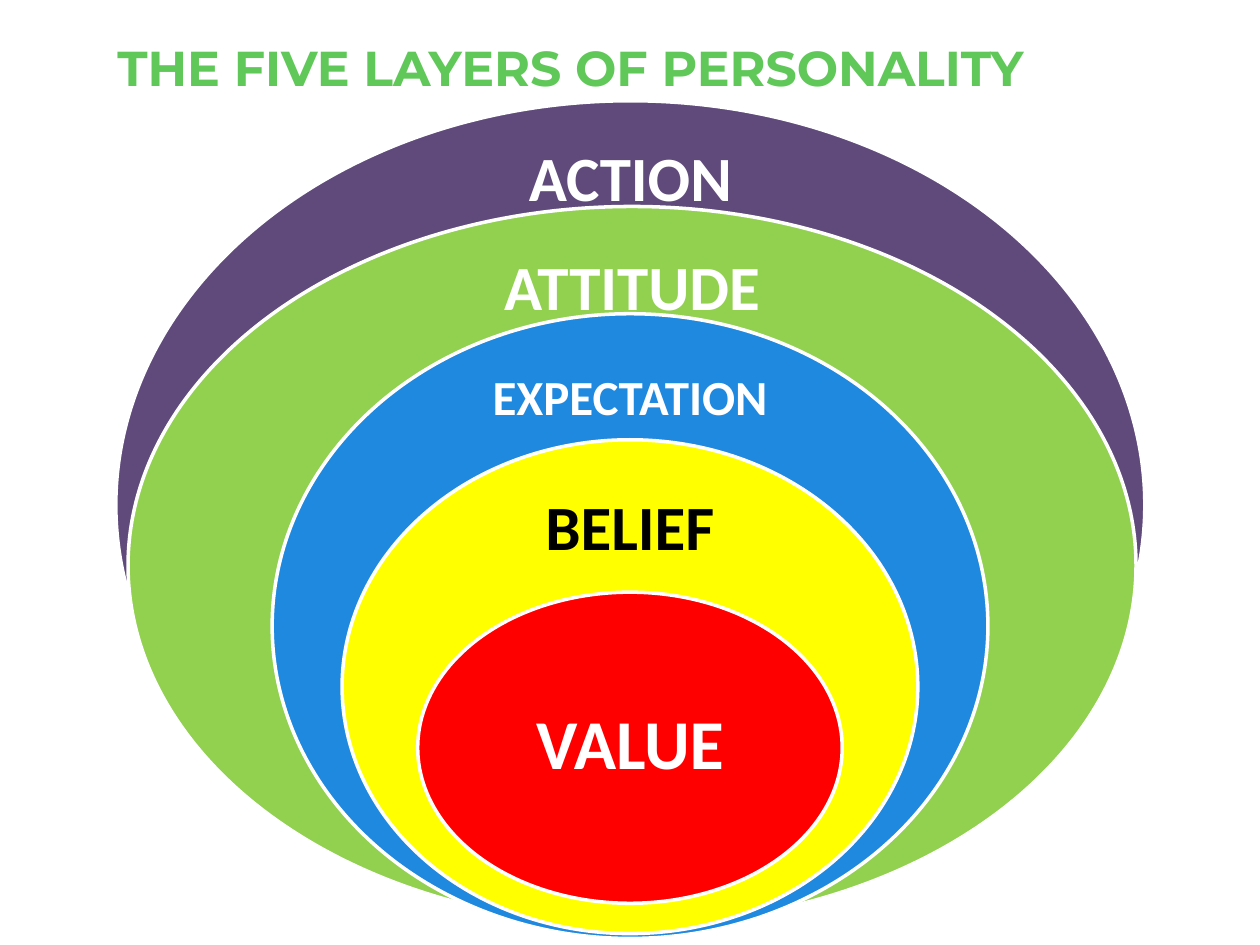
from dataclasses import dataclass

from pptx import Presentation
from pptx.dml.color import RGBColor
from pptx.enum.shapes import MSO_SHAPE
from pptx.enum.text import MSO_ANCHOR, PP_ALIGN
from pptx.util import Pt

OVAL = MSO_SHAPE.OVAL
MIDDLE, TOP = MSO_ANCHOR.MIDDLE, MSO_ANCHOR.TOP
CENTER, LEFT = PP_ALIGN.CENTER, PP_ALIGN.LEFT


@dataclass(frozen=True)
class Theme:
    title: str = "60C858"
    white: str = "FFFFFF"
    black: str = "000000"
    purple: str = "604A7B"
    green: str = "92D050"
    blue: str = "1F88DF"
    yellow: str = "FFFF00"
    red: str = "FF0000"
    small: int = 28
    large: int = 36
    huge: int = 40
    head: str = "Montserrat"
    body: str = "Calibri"


theme = Theme()


def add_text(shapes, box, text, font, size, color, align, anchor):
    label = shapes.add_textbox(*map(Pt, box))
    frame = label.text_frame
    frame.word_wrap = True
    frame.vertical_anchor = anchor
    para = frame.paragraphs[0]
    para.alignment = align
    run = para.add_run()
    run.text = text
    run.font.name = font
    run.font.size = Pt(size)
    run.font.bold = True
    run.font.color.rgb = RGBColor.from_string(color)
    return frame


prs = Presentation()
prs.slide_width, prs.slide_height = Pt(720), Pt(540)
slide = prs.slides.add_slide(prs.slide_layouts[6])

# Title
add_text(slide.shapes, (60, 18, 594, 63), "THE FIVE LAYERS OF PERSONALITY",
         theme.head, theme.small, theme.title, LEFT, TOP)

# Layers, outermost first: name, fill, text colour, text size, centre x,
# oval (top, width, height), label (top, width, height)
layers = [
    ("ACTION", theme.purple, theme.white, theme.large, 360.2,
     (57.6, 588, 462), (80.6, 220, 46)),
    ("ATTITUDE", theme.green, theme.white, theme.large, 361.2,
     (118, 576, 410.4), (141.8, 248, 47.5)),
    ("EXPECTATION", theme.blue, theme.white, theme.small, 360,
     (179.3, 409, 357), (203.8, 212, 49)),
    ("BELIEF", theme.yellow, theme.black, theme.large, 360,
     (251.3, 329, 282.2), (277.2, 178, 51)),
    ("VALUE", theme.red, theme.white, theme.huge, 360,
     (338.4, 242.6, 177.8), (382.3, 171.4, 89.3)),
]

# Nested ovals with their labels
group = slide.shapes.add_group_shape()
for name, fill, color, size, mid, oval, label in layers:
    top, width, height = oval
    ring = group.shapes.add_shape(
        OVAL, Pt(mid - width / 2), Pt(top), Pt(width), Pt(height))
    ring.shadow.inherit = False
    ring.fill.solid()
    ring.fill.fore_color.rgb = RGBColor.from_string(fill)
    ring.line.color.rgb = RGBColor.from_string(theme.white)
    ring.line.width = Pt(2)

    top, width, height = label
    frame = add_text(group.shapes, (mid - width / 2, top, width, height),
                     name, theme.body, size, color, CENTER, MIDDLE)
    frame.paragraphs[0].line_spacing = 0.9
    inset = Pt(size * 0.56)
    frame.margin_left = frame.margin_right = inset
    frame.margin_top = frame.margin_bottom = inset

prs.save("out.pptx")
